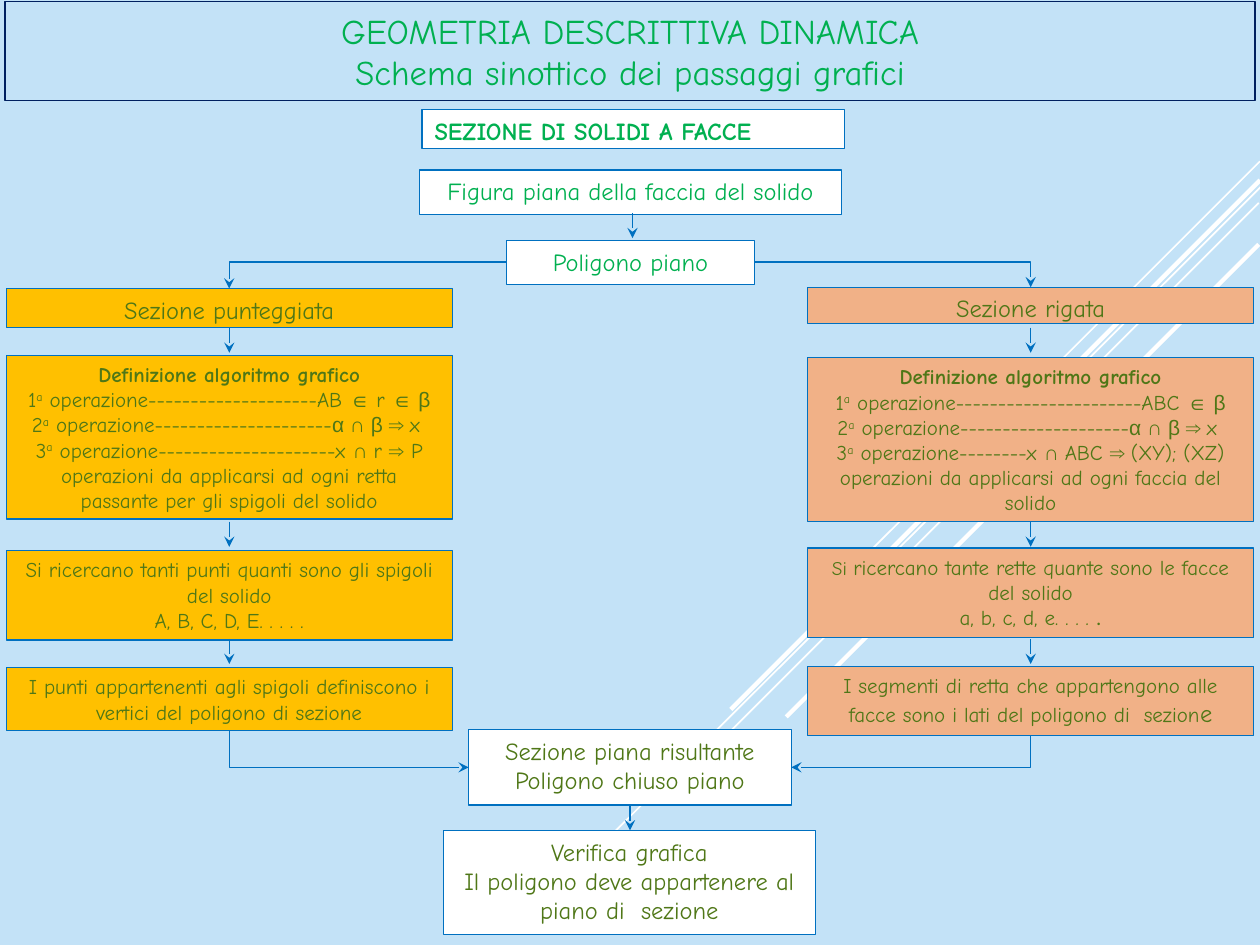
import pptx
import pptx.util
import pptx.dml.color
import pptx.enum.shapes
import pptx.enum.text
import pptx.oxml.ns
import lxml.etree

THEME = {
    "bg": "C3E2F7", "white": "FFFFFF", "navy": "002060", "blue": "0070C0",
    "green": "00B050", "olive": "4F7717", "amber": "FFC000", "salmon": "F1B187",
    "font": "Comic Neue", "title": 19.8, "head": 14, "body": 12, "small": 11, "rule": 0.75,
}

# Run styles: what differs from the paragraph's own format
STYLES = {
    "sup": {"baseline": 30000},
    "sym": {"font": "Arial", "bold": True},
    "greek": {"font": "Arial"},
    "small": {"size": THEME["small"]},
    "big": {"size": THEME["head"]},
    "dot": {"font": "Calibri"},
}


def operation(n, dashes, *rest):
    """Numbered step of the algorithm, with its dashed leader."""
    first, *others = rest
    return [n, ("a", "sup"), " operazione" + "-" * dashes + first, *others]


IN, CAP, SO = ("∈ ", "sym"), ("∩ ", "sym"), ("⇒ ", "sym")
ALPHA, BETA = ("α ", "greek"), ("β ", "greek")
ALGORITHM = [("Definizione algoritmo grafico", "bold")]
STYLES["bold"] = {"bold": True}

# Columns: left edge, fill, and boxes as (top, height, size, paragraphs)
COL_W = 3.54
COLUMNS = [
    (0.05, "amber", [
        (2.29, 0.31, "head", [["Sezione punteggiata"]]),
        (2.82, 1.30, "body", [
            ALGORITHM,
            operation("1", 20, "AB ", IN, "r ", IN, ("β", "greek")),
            operation("2", 21, "", ALPHA, CAP, BETA, SO, "x "),
            operation("3", 21, "x ", CAP, "r ", ("⇒", "sym"), " P"),
            ["operazioni da applicarsi ad ogni retta passante per gli spigoli del solido"]]),
        (4.37, 0.71, "body", [
            ["Si ricercano tanti punti quanti sono gli spigoli del solido"],
            ["A, B, C, D, E. . . . ."]]),
        (5.30, 0.50, "body", [
            ["I punti appartenenti agli spigoli definiscono i vertici del poligono di sezione"]]),
    ]),
    (6.41, "salmon", [
        (2.28, 0.29, "head", [["Sezione rigata"]]),
        (2.84, 1.30, "body", [
            ALGORITHM,
            operation("1", 22, "ABC ", IN, ("β", "greek")),
            operation("2", 20, "", ALPHA, CAP, BETA, SO, "x "),
            operation("3", 8, "x ", CAP, "ABC ", SO, "(XY); (XZ)"),
            ["operazioni da applicarsi ad ogni faccia del solido"]]),
        (4.35, 0.71, "body", [
            [("Si ", "small"), "ricercano tante rette quante sono le facce del solido"],
            ["a, b, c, d, e. . . . ", (".", "dot")]]),
        (5.29, 0.55, "body", [
            ["I segmenti di retta che appartengono alle facce sono i lati del poligono di  sezion",
             ("e", "big")]]),
    ]),
]
# Middle boxes: left, top, width, height, colour, align, bold, paragraphs
MIDDLE = [
    (3.35, 0.87, 3.35, 0.31, "green", "LEFT", True, [["SEZIONE DI SOLIDI A FACCE"]]),
    (3.33, 1.35, 3.35, 0.35, "green", "CENTER", False, [["Figura piana della faccia del solido"]]),
    (4.02, 1.91, 1.97, 0.35, "green", "CENTER", False, [["Poligono piano"]]),
    (3.72, 5.79, 2.56, 0.60, "olive", "CENTER", False,
     [["Sezione piana risultante"], ["Poligono chiuso piano"]]),
    (3.52, 6.59, 2.95, 0.83, "olive", "CENTER", False,
     [["Verifica grafica"], ["Il poligono deve appartenere al piano di  sezione"]]),
]
TITLE = [["GEOMETRIA DESCRITTIVA DINAMICA\vSchema sinottico dei passaggi grafici"]]
# Background rays: start, end, weight
RAYS = [
    (10, 1.28, 6.57, 4.71, 1), (10.01, 1.48, 4.74, 6.74, 1), (9.99, 1.61, 5.71, 5.89, 1),
    (10, 1.43, 5.8, 5.63, 2.5), (9.99, 1.94, 6.24, 5.69, 2.5),
]
# Short vertical arrows
ARROW = 0.2
COL_ARROWS = (2.6, 4.14, 5.07)
MID_ARROWS = ((5.02, 1.69), (5, 6.39))

inch = pptx.util.Inches


def rgb(name):
    return pptx.dml.color.RGBColor.from_string(THEME[name])


def write(sp, paras, size="head", color="olive", align="CENTER", bold=False, anchor="TOP"):
    tf = sp.text_frame
    tf.word_wrap = True
    tf.vertical_anchor = pptx.enum.text.MSO_ANCHOR[anchor]
    for i, runs in enumerate(paras):
        p = tf.add_paragraph() if i else tf.paragraphs[0]
        p.alignment = pptx.enum.text.PP_ALIGN[align]
        for run in runs:
            words, key = (run, None) if isinstance(run, str) else run
            style = STYLES.get(key, {})
            for j, line in enumerate(words.split("\v")):
                if j:
                    p.add_line_break()
                r = p.add_run()
                r.text = line
                r.font.name = style.get("font", THEME["font"])
                r.font.size = pptx.util.Pt(style.get("size", THEME[size]))
                r.font.bold = style.get("bold", bold)
                r.font.color.rgb = rgb(color)
                if "baseline" in style:
                    r.font._element.set("baseline", str(style["baseline"]))


def box(slide, x, y, w, h, paras, fill=None, line="blue", **fmt):
    sp = slide.shapes.add_shape(pptx.enum.shapes.MSO_SHAPE.RECTANGLE, *map(inch, (x, y, w, h)))
    sp.shadow.inherit = False
    if fill:
        sp.fill.solid()
        sp.fill.fore_color.rgb = rgb(fill)
    else:
        sp.fill.background()
    sp.line.color.rgb = rgb(line)
    sp.line.width = pptx.util.Pt(THEME["rule"])
    write(sp, paras, **fmt)


def connect(slide, x1, y1, x2, y2, color="blue", weight=THEME["rule"], head=True, bent=False):
    kind = "ELBOW" if bent else "STRAIGHT"
    c = slide.shapes.add_connector(pptx.enum.shapes.MSO_CONNECTOR[kind],
                                   *map(inch, (x1, y1, x2, y2)))
    c.line.color.rgb = rgb(color)
    c.line.width = pptx.util.Pt(weight)
    pr, qn = c._element.spPr, pptx.oxml.ns.qn
    if bent:
        pr.find(qn("a:prstGeom")).set("prst", "bentConnector2")
    if head:
        lxml.etree.SubElement(pr.find(qn("a:ln")), qn("a:tailEnd")).set("type", "stealth")
    lxml.etree.SubElement(pr, qn("a:effectLst"))
    return c


def down_then_across(slide, x1, y1, x2, y2):
    """Elbow that leaves vertically: a quarter-turned box about the same centre."""
    cx, cy = (x1 + x2) / 2, (y1 + y2) / 2
    half_w, half_h = (y2 - y1) / 2, abs(x2 - x1) / 2
    side = 1 if x2 > x1 else -1
    c = connect(slide, cx + side * half_w, cy - half_h, cx - side * half_w, cy + half_h, bent=True)
    turn = 270 if side > 0 else 90
    c._element.spPr.find(pptx.oxml.ns.qn("a:xfrm")).set("rot", str(turn * 60000))


def main():
    prs = pptx.Presentation()
    prs.slide_width, prs.slide_height = inch(10), inch(7.5)
    slide = prs.slides.add_slide(prs.slide_layouts[6])
    slide.background.fill.solid()
    slide.background.fill.fore_color.rgb = rgb("bg")

    # Background rays and title
    for *ends, weight in RAYS:
        connect(slide, *ends, color="white", weight=weight, head=False)
    box(slide, 0.04, 0.01, 9.92, 0.79, TITLE, line="navy", size="title", color="green",
        anchor="MIDDLE")

    # Middle boxes and their arrows
    for x, y, w, h, color, align, bold, paras in MIDDLE:
        box(slide, x, y, w, h, paras, fill="white", color=color, align=align, bold=bold)
    for x, y in MID_ARROWS:
        connect(slide, x, y, x, y + ARROW)

    # Side columns, with elbows from the polygon and to the result
    polygon, result = MIDDLE[2], MIDDLE[3]
    for x, fill, boxes in COLUMNS:
        for y, h, size, paras in boxes:
            box(slide, x, y, COL_W, h, paras, fill=fill, size=size)
        mid = x + COL_W / 2
        for y in COL_ARROWS:
            connect(slide, mid, y, mid, y + ARROW)
        on_right = x > 5
        connect(slide, polygon[0] + polygon[2] * on_right, 2.08, mid, boxes[0][0], bent=True)
        last_top, last_h = boxes[-1][:2]
        down_then_across(slide, mid, last_top + last_h, result[0] + result[2] * on_right, 6.09)

    prs.save("out.pptx")


if __name__ == "__main__":
    main()
